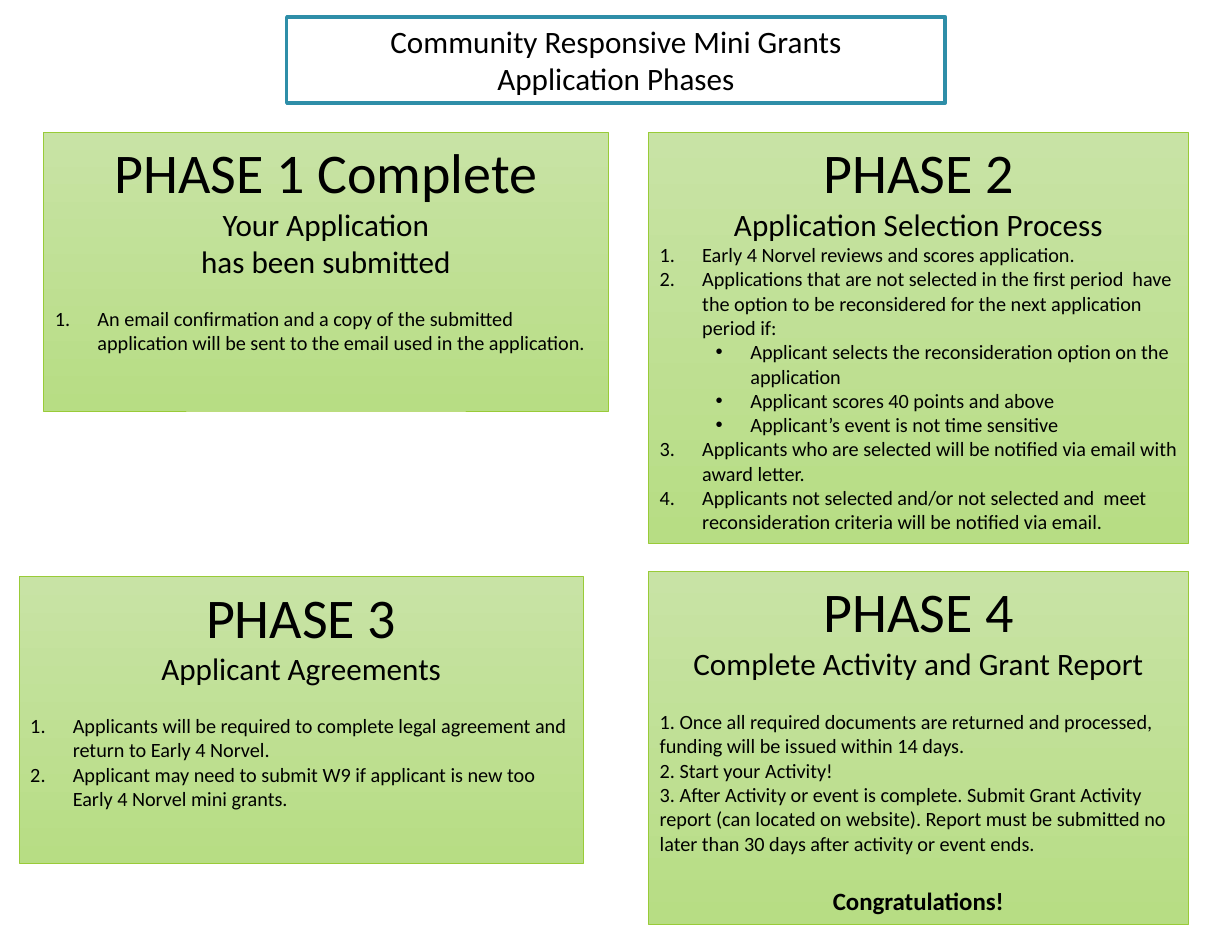
from lxml.etree import SubElement
from pptx import Presentation
from pptx.dml.color import RGBColor
from pptx.enum.text import MSO_ANCHOR as Anchor, MSO_AUTO_SIZE as AutoSize, PP_ALIGN as Align
from pptx.oxml.ns import qn
from pptx.util import Inches, Pt

COLORS = {
    "text": "000000",
    "panel_top": "C8E3A5",
    "panel_bottom": "B7DD84",
    "panel_line": "99CB38",
    "title_fill": "FFFFFF",
    "title_line": "2E8EA8",
}
COLUMNS, ROWS = 110, 85
BLANK_LINE = 17
COMPARISON_LAYOUT = 4


def color(name):
    return RGBColor.from_string(COLORS[name])


class PhaseSlide:
    font = "Calibri"
    sizes = {"heading": 36, "subheading": 20, "item": 13, "closing": 16}
    indents = {"number": (0.38, -0.38), "bullet": (0.81, -0.31)}

    def __init__(self, presentation):
        self.width = presentation.slide_width
        self.height = presentation.slide_height
        layout = presentation.slide_layouts[COMPARISON_LAYOUT]
        self.slide = presentation.slides.add_slide(layout)

    def place(self, index, column, row, columns, rows):
        shape = self.slide.placeholders[index]
        shape.left = round(self.width * column / COLUMNS)
        shape.top = round(self.height * row / ROWS)
        shape.width = round(self.width * columns / COLUMNS)
        shape.height = round(self.height * rows / ROWS)
        frame = shape.text_frame
        frame.word_wrap = True
        frame.auto_size = AutoSize.NONE
        frame.vertical_anchor = Anchor.TOP
        return shape

    def marker(self, paragraph, kind):
        properties = paragraph._p.get_or_add_pPr()
        left, first = self.indents.get(kind, (0, 0))
        properties.set("marL", str(Inches(left)))
        properties.set("indent", str(Inches(first)))
        if kind == "number":
            SubElement(properties, qn("a:buFont"), typeface="+mj-lt")
            SubElement(properties, qn("a:buAutoNum"), type="arabicPeriod")
        elif kind == "bullet":
            SubElement(properties, qn("a:buFont"), typeface="Arial")
            SubElement(properties, qn("a:buChar"), char="•")
        else:
            SubElement(properties, qn("a:buNone"))

    def fill_text(self, shape, lines):
        frame = shape.text_frame
        frame.text = "\n".join(text for _, text, _ in lines)
        for paragraph, (kind, _, gap) in zip(frame.paragraphs, lines):
            centered = kind in ("heading", "subheading", "closing")
            paragraph.alignment = Align.CENTER if centered else Align.LEFT
            paragraph.level = 1 if kind == "bullet" else 0
            paragraph.space_before = Pt(gap)
            self.marker(paragraph, kind)
            for run in paragraph.runs:
                run.font.name = self.font
                run.font.size = Pt(self.sizes.get(kind, self.sizes["item"]))
                run.font.bold = kind == "closing"
                run.font.color.rgb = color("text")

    def title(self, area, lines):
        shape = self.place(0, *area)
        shape.fill.solid()
        shape.fill.fore_color.rgb = color("title_fill")
        shape.line.color.rgb = color("title_line")
        shape.line.width = Pt(2.25)
        self.fill_text(shape, [("subheading", line, 0) for line in lines])

    def panel(self, index, area, lines):
        shape = self.place(index, *area)
        shape.fill.gradient()
        shape.fill.gradient_angle = 270
        for stop, name in zip(shape.fill.gradient_stops, ("panel_top", "panel_bottom")):
            stop.color.rgb = color(name)
        shape.line.color.rgb = color("panel_line")
        shape.line.width = Pt(0.5)
        self.fill_text(shape, lines)


PHASES = [
    ((3.9, 11.8, 50.4, 24.9), [
        ("heading", "PHASE 1 Complete", 0),
        ("subheading", "Your Application", 0),
        ("subheading", "has been submitted", 0),
        ("number", "An email confirmation and a copy of the submitted application "
                   "will be sent to the email used in the application.", BLANK_LINE),
    ]),
    ((57.9, 11.8, 48.2, 36.7), [
        ("heading", "PHASE 2", 0),
        ("subheading", "Application Selection Process", 0),
        ("number", "Early 4 Norvel reviews and scores application.", 0),
        ("number", "Applications that are not selected in the first period  have the option "
                   "to be reconsidered for the next application period if:", 0),
        ("bullet", "Applicant selects the reconsideration option on the application", 0),
        ("bullet", "Applicant scores 40 points and above", 0),
        ("bullet", "Applicant’s event is not time sensitive", 0),
        ("number", "Applicants who are selected will be notified via email with award letter.", 0),
        ("number", "Applicants not selected and/or not selected and  meet reconsideration "
                   "criteria will be notified via email.", 0),
    ]),
    ((1.7, 51.5, 50.4, 25.6), [
        ("heading", "PHASE 3", 0),
        ("subheading", "Applicant Agreements", 0),
        ("number", "Applicants will be required to complete legal agreement and return "
                   "to Early 4 Norvel.", BLANK_LINE),
        ("number", "Applicant may need to submit W9 if applicant is new too "
                   "Early 4 Norvel mini grants.", 0),
    ]),
    ((57.9, 51, 48.2, 31.5), [
        ("heading", "PHASE 4", 0),
        ("subheading", "Complete Activity and Grant Report", 0),
        ("plain", "1. Once all required documents are returned and processed, "
                  "funding will be issued within 14 days.", BLANK_LINE + 1),
        ("plain", "2. Start your Activity!", 0),
        ("plain", "3. After Activity or event is complete. Submit Grant Activity report "
                  "(can located on website). Report must be submitted no later than "
                  "30 days after activity or event ends.", 0),
        ("closing", "Congratulations!", BLANK_LINE + 2.5),
    ]),
]


def main():
    presentation = Presentation()
    presentation.slide_width = Inches(11)
    presentation.slide_height = Inches(8.5)
    slide = PhaseSlide(presentation)
    slide.title((25.6, 1.5, 58.8, 7.7),
                ["Community Responsive Mini Grants", "Application Phases"])
    for index, (area, lines) in enumerate(PHASES, start=1):
        slide.panel(index, area, lines)
    presentation.save("out.pptx")


if __name__ == "__main__":
    main()
